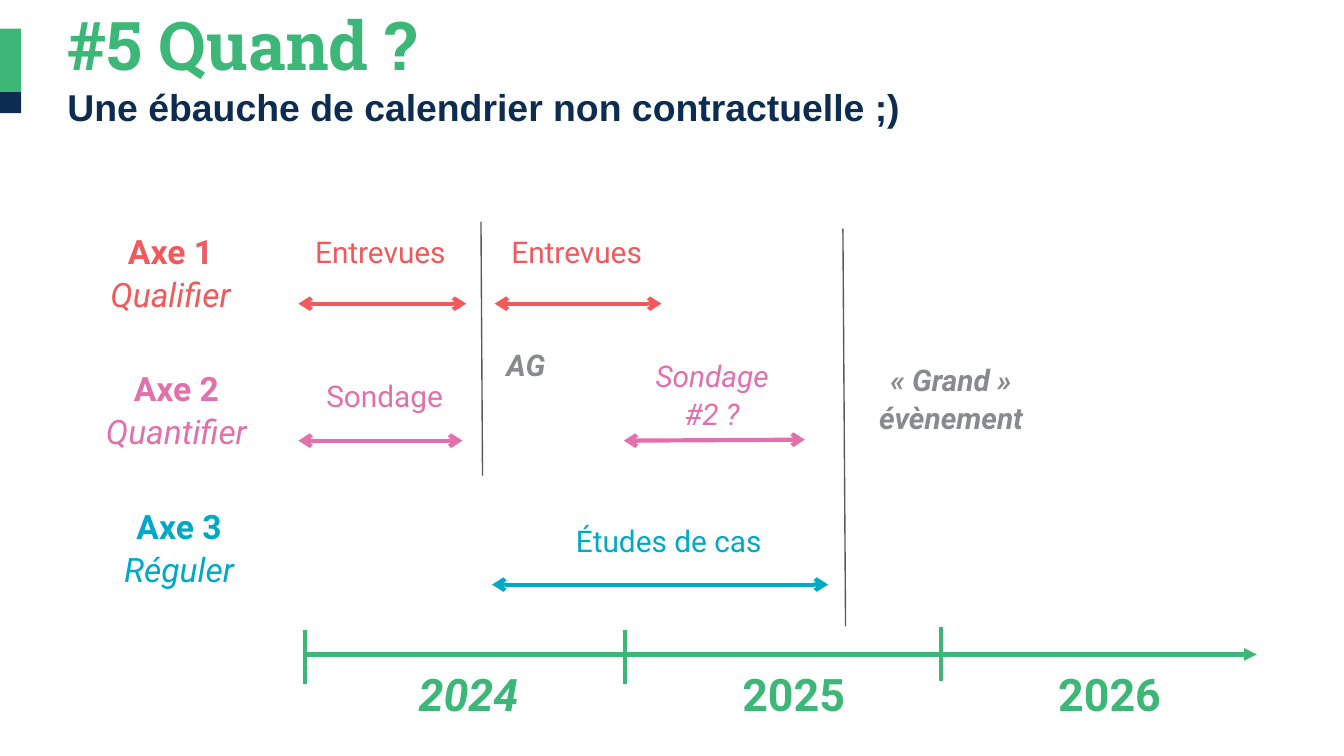
import pptx
import pptx.util
import pptx.dml.color
import pptx.enum.shapes
import pptx.enum.text
import pptx.oxml.ns
import lxml.etree

Cm = pptx.util.Cm
Pt = pptx.util.Pt
RGBColor = pptx.dml.color.RGBColor
qn = pptx.oxml.ns.qn

colors = {
    "green": "3CB778",
    "navy": "0D2C52",
    "red": "F1595C",
    "pink": "E170AC",
    "blue": "00A9C6",
    "grey": "888A8D",
    "dark": "595959",
}

deck = pptx.Presentation()
deck.slide_width = Cm(25.4)
deck.slide_height = Cm(14.29)
page = deck.slides.add_slide(deck.slide_layouts[5])


def add_line(start, end, color, width=2.25, head=None, tail=None):
    line = page.shapes.add_connector(
        pptx.enum.shapes.MSO_CONNECTOR.STRAIGHT,
        Cm(start[0]), Cm(start[1]), Cm(end[0]), Cm(end[1]))
    line.line.color.rgb = RGBColor.from_string(colors[color])
    line.line.width = Pt(width)
    outline = line.line._get_or_add_ln()
    for tag, kind in (("a:headEnd", head), ("a:tailEnd", tail)):
        if kind:
            lxml.etree.SubElement(outline, qn(tag), type=kind)
    lxml.etree.SubElement(line._element.spPr, qn("a:effectLst"))


def add_label(place, lines, size, color):
    box = page.shapes.add_textbox(*[Cm(length) for length in place])
    frame = box.text_frame
    frame.word_wrap = True
    frame.vertical_anchor = pptx.enum.text.MSO_ANCHOR.MIDDLE
    for index, (text, bold, italic) in enumerate(lines):
        para = frame.add_paragraph() if index else frame.paragraphs[0]
        para.text = text
        para.alignment = pptx.enum.text.PP_ALIGN.CENTER
        para.line_spacing = 1.07
        para.font.name = "Roboto"
        para.font.size = Pt(size)
        para.font.bold = bold
        para.font.italic = italic
        para.font.color.rgb = RGBColor.from_string(colors[color])


for top, height, color in ((1.74, 0.4, "navy"), (0.54, 1.2, "green")):
    bar = page.shapes.add_shape(
        pptx.enum.shapes.MSO_SHAPE.RECTANGLE, 0, Cm(top), Cm(0.4), Cm(height))
    bar.shadow.inherit = False
    bar.fill.solid()
    bar.fill.fore_color.rgb = RGBColor.from_string(colors[color])
    bar.line.fill.background()

title = page.shapes.title
title.left, title.top, title.width, title.height = Cm(1.02), Cm(0.15), Cm(22.73), Cm(2.21)
title.text_frame.auto_size = pptx.enum.text.MSO_AUTO_SIZE.NONE
title.text_frame.vertical_anchor = pptx.enum.text.MSO_ANCHOR.MIDDLE
para = title.text_frame.paragraphs[0]
para.alignment = pptx.enum.text.PP_ALIGN.LEFT
for index, (text, font, size, color) in enumerate((
    ("#5 Quand ?", "Roboto Slab", 36, "green"),
    ("Une ébauche de calendrier non contractuelle ;)", "Arial", 20, "navy"),
)):
    if index:
        para.add_line_break()
    span = para.add_run()
    span.text = text
    span.font.name = font
    span.font.size = Pt(size)
    span.font.bold = True
    span.font.color.rgb = RGBColor.from_string(colors[color])

add_line((5.77, 12.37), (23.75, 12.37), "green", tail="triangle")
for year, tick, top, italic in (
    ("2024 ", 5.77, 11.91, True),
    ("2025", 11.81, 11.91, False),
    ("2026", 17.78, 11.86, False),
):
    add_line((tick, top), (tick, top + 1.01), "green")
    add_label((tick + 1.35, 12.62, 3.68, 0.91), [(year, True, italic)], 24, "green")

for name, aim, left, top, width, color in (
    ("Axe 1", "Qualifier", 1.27, 4.65, 3.91, "red"),
    ("Axe 2", "Quantifier", 0.86, 7.24, 4.95, "pink"),
    ("Axe 3", "Réguler", 0.91, 9.86, 4.95, "blue"),
):
    add_label((left, top, width, 0.94), [(name, True, False), (aim, False, True)], 18, color)

for text, place, start, end, color, italic in (
    ("Entrevues", (5.64, 3.96, 3.1, 1.55), (5.64, 5.74), (8.81, 5.74), "red", False),
    ("Entrevues", (9.35, 3.96, 3.1, 1.55), (9.35, 5.74), (12.5, 5.74), "red", False),
    ("Sondage", (5.72, 6.88, 3.1, 1.14), (5.64, 8.33), (8.74, 8.33), "pink", False),
    ("Sondage #2 ?", (11.91, 6.86, 3.1, 1.14), (11.79, 8.33), (15.21, 8.31), "pink", True),
    ("Études de cas", (10.29, 9.78, 4.7, 0.84), (9.3, 11.05), (15.65, 11.05), "blue", False),
):
    add_line(start, end, color, head="arrow", tail="arrow")
    add_label(place, [(text, False, italic)], 16, color)

for text, place, start, end in (
    ("AG", (9.19, 5.84, 1.5, 2.06), (9.09, 4.19), (9.12, 8.99)),
    ("« Grand » évènement", (15.98, 6.48, 3.99, 2.06), (15.93, 4.32), (15.98, 11.84)),
):
    add_line(start, end, "dark", width=0.75)
    add_label(place, [(text, True, True)], 16, "grey")

deck.save("out.pptx")
